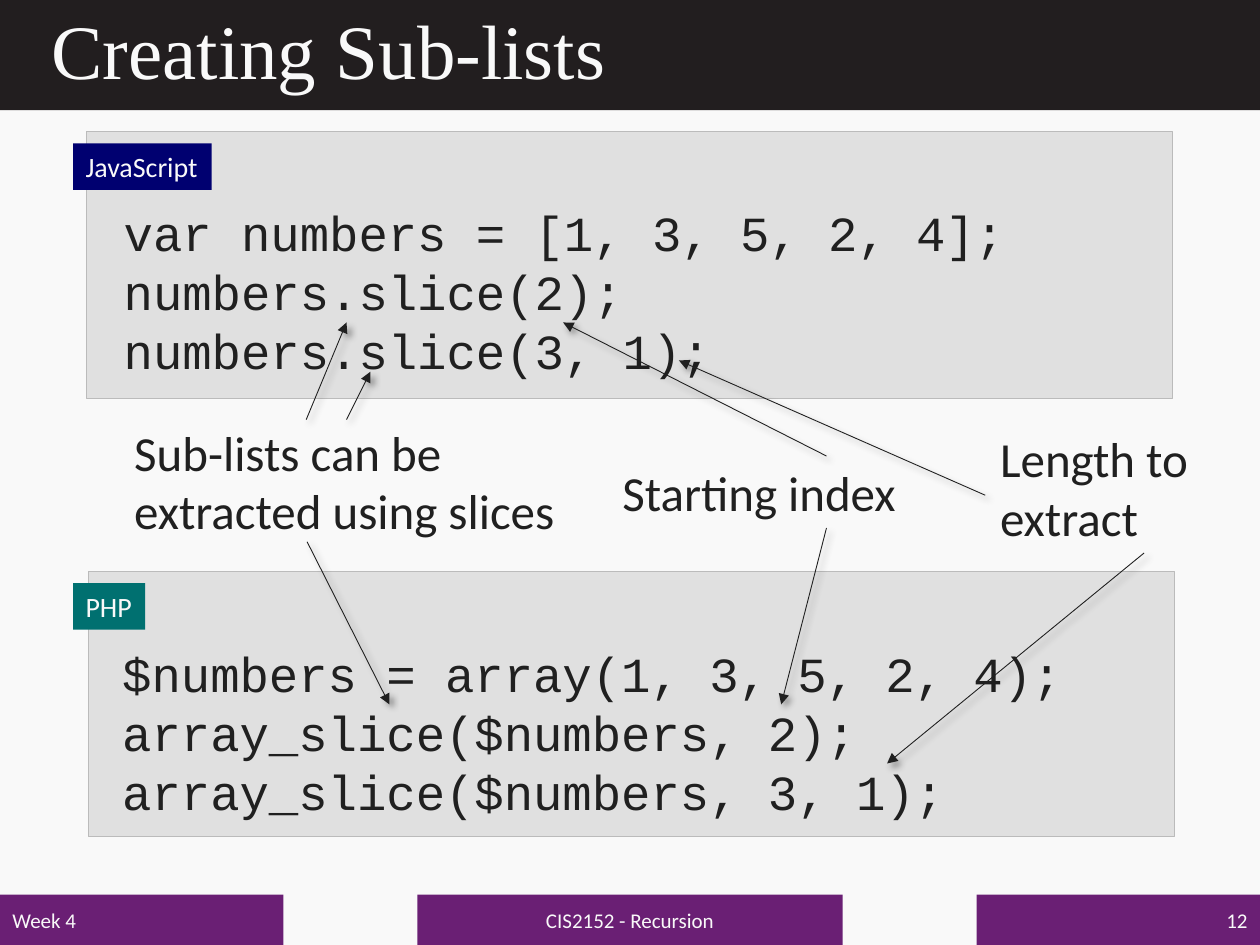
import pptx
import pptx.util
import pptx.dml.color
import pptx.enum.shapes
import pptx.enum.text
import lxml.etree

Pt = pptx.util.Pt
Align = pptx.enum.text.PP_ALIGN
Anchor = pptx.enum.text.MSO_ANCHOR
LIGHT, DARK, BLACK, PURPLE = "F9F9F9", "202020", "221E1F", "6A1F74"
GREY, EDGE = "E0E0E0", "BBBBBB"
BODY, CODE, HEAD = "Calibri", "Courier New", "Times New Roman"

TITLE = "Creating Sub-lists"
FOOT = [
    ("Week 4", 0, 162, Align.LEFT),
    ("CIS2152 - Recursion", 238.5, 243, Align.CENTER),
    ("12", 558, 162, Align.RIGHT),
]
PANELS = [
    {"name": "JavaScript", "fill": "000070", "tag": (41.8, 82, 79.2, 26.6),
     "box": (49.2, 75, 620.6, 152.6), "area": (63.6, 112.3, 522, 108.7),
     "code": ["var numbers = [1, 3, 5, 2, 4];", "numbers.slice(2);",
              "numbers.slice(3, 1);"]},
    {"name": "PHP", "fill": "007070", "tag": (41.8, 333.2, 41.2, 26.6),
     "box": (50.4, 326.4, 620.6, 151.6), "area": (62.8, 364.3, 556, 108.7),
     "code": ["$numbers = array(1, 3, 5, 2, 4);", "array_slice($numbers, 2);",
              "array_slice($numbers, 3, 1);"]},
]
NOTES = [
    ("Sub-lists can be extracted using slices", (69.6, 237.6, 278, 75.1)),
    ("Starting index", (348.5, 260.6, 248.4, 41.2)),
    ("Length to extract", (564.4, 241.2, 179.3, 75.1)),
]
ARROWS = [
    (175, 239.8, 198, 184.3),
    (198, 239.8, 211.7, 212.4),
    (175.5, 309.6, 222.5, 402.5),
    (472.3, 260.6, 321.8, 184.3),
    (472.3, 301.7, 446.4, 402.5),
    (563, 283, 388, 206),
    (653.8, 316, 506.9, 436.3),
]
NS = "http://schemas.openxmlformats.org/drawingml/2006/main"
SHADE = f"""<a:effectLst xmlns:a="{NS}">
<a:outerShdw blurRad="50800" dist="38100" dir="2700000">
<a:srgbClr val="000000"><a:alpha val="40000"/></a:srgbClr>
</a:outerShdw></a:effectLst>"""


def tint(code):
    return pptx.dml.color.RGBColor.from_string(code)


def write(shape, lines, size, font, color, align=Align.LEFT,
          anchor=Anchor.TOP, wrap=True):
    frame = shape.text_frame
    frame.word_wrap = wrap
    frame.vertical_anchor = anchor
    for i, line in enumerate(lines):
        para = frame.add_paragraph() if i else frame.paragraphs[0]
        para.alignment = align
        run = para.add_run()
        run.text = line
        run.font.size = Pt(size)
        run.font.name = font
        run.font.color.rgb = tint(color)


def block(slide, place, fill, edge=None):
    kind = pptx.enum.shapes.MSO_SHAPE.RECTANGLE
    shape = slide.shapes.add_shape(kind, *map(Pt, place))
    shape.shadow.inherit = False
    shape.fill.solid()
    shape.fill.fore_color.rgb = tint(fill)
    if edge:
        shape.line.color.rgb = tint(edge)
        shape.line.width = Pt(0.5)
    else:
        shape.line.fill.background()
    return shape


def label(slide, place, lines, font, wrap=True):
    box = slide.shapes.add_textbox(*map(Pt, place))
    write(box, lines, 28, font, DARK, wrap=wrap)


def arrow(slide, ends):
    kind = pptx.enum.shapes.MSO_CONNECTOR.STRAIGHT
    line = slide.shapes.add_connector(kind, *map(Pt, ends))
    line.line.color.rgb = tint(DARK)
    line.line.width = Pt(0.5)
    tip = lxml.etree.SubElement(line.line._get_or_add_ln(), f"{{{NS}}}tailEnd")
    tip.set("type", "triangle")
    line._element.spPr.append(lxml.etree.fromstring(SHADE))


def main():
    deck = pptx.Presentation()
    deck.slide_width, deck.slide_height = Pt(720), Pt(540)
    slide = deck.slides.add_slide(deck.slide_layouts[5])
    back = slide.background.fill
    back.solid()
    back.fore_color.rgb = tint(LIGHT)

    block(slide, (0, 0, 720, 63), BLACK)
    title = slide.shapes.title
    title._element.getparent().append(title._element)
    title.left, title.top, title.width, title.height = map(
        Pt, (22.3, 0, 676, 62))
    write(title, [TITLE], 44, HEAD, LIGHT, anchor=Anchor.MIDDLE)
    title.text_frame.paragraphs[0].line_spacing = 0.9

    for text, left, width, align in FOOT:
        bar = block(slide, (left, 511.2, width, 28.8), PURPLE)
        write(bar, [text], 12, BODY, LIGHT, align, Anchor.MIDDLE)

    for panel in PANELS:
        block(slide, panel["box"], GREY, EDGE)
        label(slide, panel["area"], panel["code"], CODE, wrap=False)
        tag = block(slide, panel["tag"], panel["fill"])
        write(tag, [panel["name"]], 16, BODY, LIGHT, wrap=False)

    for text, place in NOTES:
        label(slide, place, [text], BODY)
    for ends in ARROWS:
        arrow(slide, ends)
    deck.save("out.pptx")


if __name__ == "__main__":
    main()
